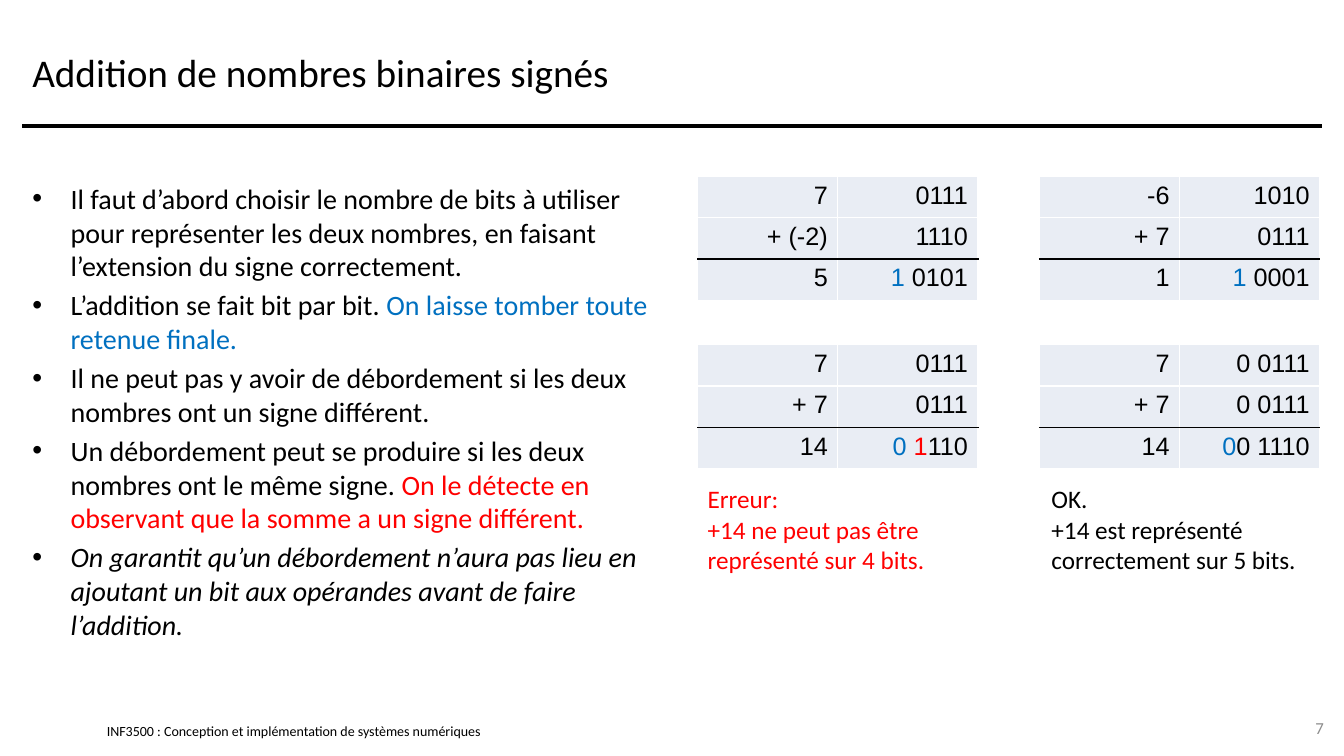
from dataclasses import dataclass

from lxml.etree import SubElement
from pptx import Presentation
from pptx.dml.color import RGBColor
from pptx.enum.shapes import MSO_CONNECTOR
from pptx.enum.text import MSO_ANCHOR, MSO_AUTO_SIZE, PP_ALIGN
from pptx.oxml.ns import qn
from pptx.util import Inches, Pt


@dataclass(frozen=True)
class Theme:
    black: str = "000000"
    white: str = "FFFFFF"
    blue: str = "0070C0"
    red: str = "FF0000"
    grey: str = "8C8C8C"
    cell: str = "E9EDF4"
    font: str = "Calibri"
    digits: str = "Arial"
    title: int = 28
    body: int = 20
    small: int = 18
    number: int = 12
    footer: int = 10


T = Theme()


def write(p, runs, size, font=T.font, align=PP_ALIGN.LEFT):
    """Fill a paragraph with (text, colour) runs."""
    p.alignment = align
    for text, colour in runs:
        r = p.add_run()
        r.text = text
        r.font.size, r.font.name = Pt(size), font
        r.font.color.rgb = RGBColor.from_string(colour)


def add_text(left, top, width, height, paragraphs, size, colour=T.black, align=PP_ALIGN.LEFT):
    """Add a wrapped text box and return its text frame."""
    tf = s.shapes.add_textbox(Inches(left), Inches(top), Inches(width), Inches(height)).text_frame
    tf.word_wrap = True
    tf.text = "\n".join(paragraphs)
    for p in tf.paragraphs:
        p.alignment = align
        for r in p.runs:
            r.font.size, r.font.name = Pt(size), T.font
            r.font.color.rgb = RGBColor.from_string(colour)
    return tf


prs = Presentation()
prs.slide_width, prs.slide_height = Inches(13.33), Inches(7.5)
s = prs.slides.add_slide(prs.slide_layouts[1])

# Grid
MARGIN, RIGHT, RULE = 0.22, 13.11, 1.25
COLS, ROWS = (6.92, 10.31), (1.75, 3.42)
CELL_W, CELL_H = 1.39, 0.41
NOTE_TOP = 4.75

# Title and rule
title = s.shapes.title
title.left, title.top = Inches(MARGIN), Inches(0.17)
title.width, title.height = Inches(RIGHT - MARGIN), Inches(1.08)
title.text_frame.vertical_anchor = MSO_ANCHOR.MIDDLE
title.text_frame.auto_size = MSO_AUTO_SIZE.NONE
write(title.text_frame.paragraphs[0], [("Addition de nombres binaires signés", T.black)], T.title)

rule = s.shapes.add_connector(MSO_CONNECTOR.STRAIGHT, Inches(MARGIN), Inches(RULE),
                              Inches(RIGHT), Inches(RULE))
rule.line.color.rgb = RGBColor.from_string(T.black)
rule.line.width = Pt(3)
SubElement(rule._element.spPr, qn("a:effectLst"))

# Bulleted list
points = [
    [("Il faut d’abord choisir le nombre de bits à utiliser pour représenter les deux nombres, "
      "en faisant l’extension du signe correctement.", T.black)],
    [("L’addition se fait bit par bit. ", T.black),
     ("On laisse tomber toute retenue finale.", T.blue)],
    [("Il ne peut pas y avoir de débordement si les deux nombres ont un signe différent.", T.black)],
    [("Un débordement peut se produire si les deux nombres ont le même signe. ", T.black),
     ("On le détecte en observant que la somme a un signe différent.", T.red)],
    [("On garantit qu’un débordement n’aura pas lieu en ajoutant un bit aux opérandes "
      "avant de faire l’addition.", T.black)],
]
body = s.placeholders[1]
body.left, body.top = Inches(MARGIN), Inches(ROWS[0])
body.width, body.height = Inches(6.33), Inches(5.08)
tf = body.text_frame
tf.auto_size = MSO_AUTO_SIZE.NONE
for i, runs in enumerate(points):
    p = tf.add_paragraph() if i else tf.paragraphs[0]
    pPr = p._p.get_or_add_pPr()
    pPr.set("marL", str(Inches(0.38)))
    pPr.set("indent", str(-Inches(0.38)))
    SubElement(pPr, qn("a:buFont"), typeface=T.digits)
    SubElement(pPr, qn("a:buChar"), char="•")
    p.space_before = Pt(0.2 * T.body if i else 0)
    write(p, runs, T.body)
for r in tf.paragraphs[-1].runs:
    r.font.italic = True

# Worked additions: two columns by two rows, each with operands and a sum
additions = [
    [("7", "0111"), ("+ (-2)", "1110"), ("5", [("1", T.blue), (" 0101", T.black)])],
    [("-6", "1010"), ("+ 7", "0111"), ("1", [("1", T.blue), (" 0001", T.black)])],
    [("7", "0111"), ("+ 7", "0111"),
     ("14", [("0 ", T.blue), ("1", T.red), ("110", T.black)])],
    [("7", "0 0111"), ("+ 7", "0 0111"), ("14", [("0", T.blue), ("0 1110", T.black)])],
]
for n, addition in enumerate(additions):
    frame = s.shapes.add_table(3, 2, Inches(COLS[n % 2]), Inches(ROWS[n // 2]),
                               Inches(2 * CELL_W), Inches(3 * CELL_H))
    table = frame.table
    table.first_row = table.horz_banding = False
    for row in table.rows:
        row.height = Inches(CELL_H)
    for i, line in enumerate(addition):
        for j, value in enumerate(line):
            cell = table.cell(i, j)
            runs = [(value, T.black)] if isinstance(value, str) else value
            write(cell.text_frame.paragraphs[0], runs, T.small, T.digits, PP_ALIGN.RIGHT)
            # Black line between the operands and the sum, white elsewhere
            for side in ("lnL", "lnR", "lnT", "lnB"):
                above_sum = (i, side) in ((1, "lnB"), (2, "lnT"))
                ln = SubElement(cell._tc.get_or_add_tcPr(), qn("a:" + side), w=str(Pt(1)))
                SubElement(SubElement(ln, qn("a:solidFill")), qn("a:srgbClr"),
                           val=T.black if above_sum else T.white)
            cell.fill.solid()
            cell.fill.fore_color.rgb = RGBColor.from_string(T.cell)

# Verdicts under the lower additions
add_text(COLS[0], NOTE_TOP, 2.75, 1.01,
         ["Erreur:\v+14 ne peut pas être représenté sur 4 bits."], T.small, T.red)
add_text(COLS[1] + 0.02, NOTE_TOP, 2.78, 1.01,
         ["OK.", "+14 est représenté correctement sur 5 bits."], T.small)

# Footer and slide number
footer = add_text(1.06, 7.17, 5.11, 0.17,
                  ["INF3500 : Conception et implémentation de systèmes numériques"], T.footer)
footer.margin_left = footer.margin_right = footer.margin_top = footer.margin_bottom = 0
number = add_text(12.56, 7.02, 0.67, 0.4, ["7"], T.number, T.grey, PP_ALIGN.RIGHT)
footer.vertical_anchor = number.vertical_anchor = MSO_ANCHOR.MIDDLE

prs.save("out.pptx")
